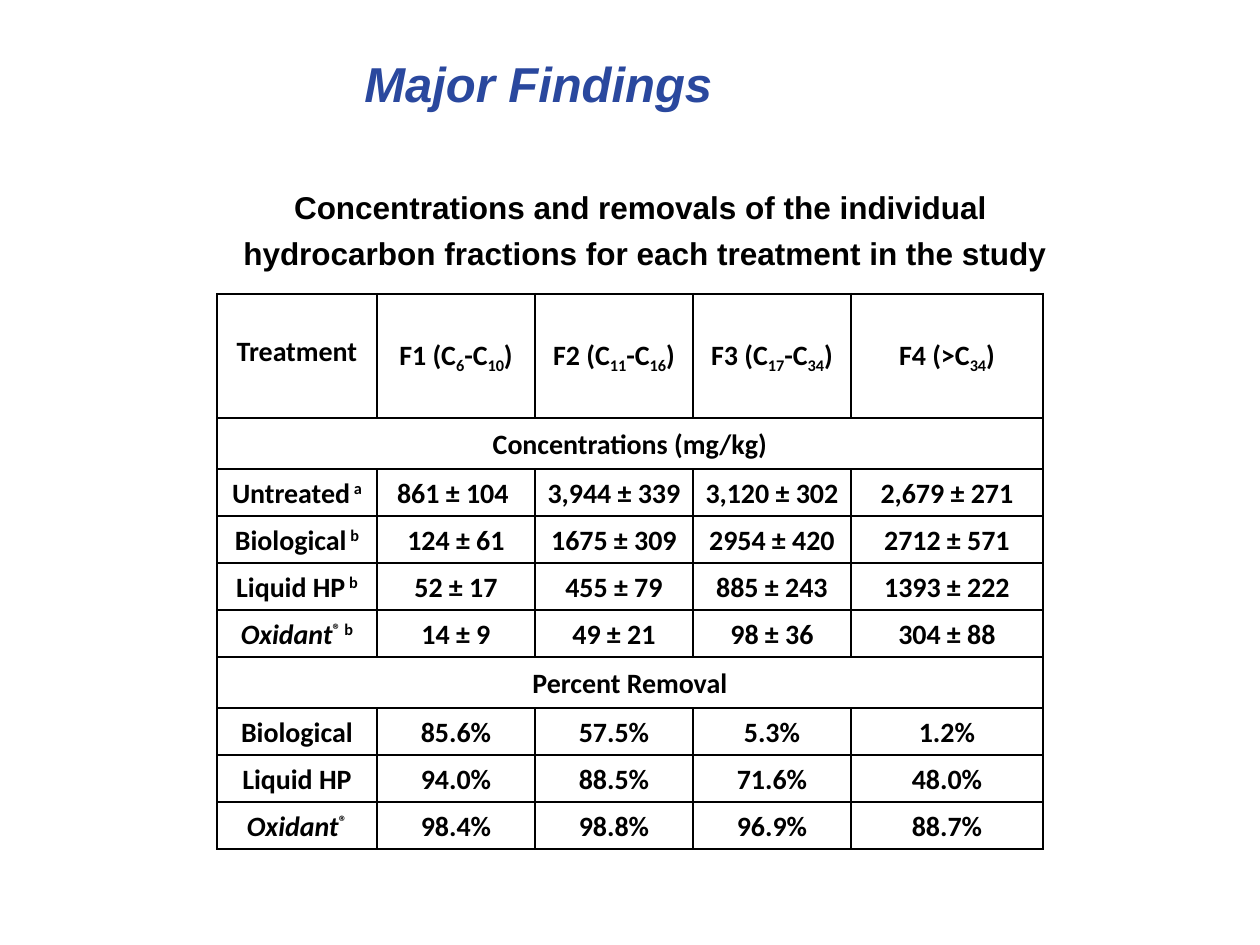
from pptx import Presentation
from pptx.dml.color import RGBColor
from pptx.enum.text import MSO_ANCHOR, PP_ALIGN
from pptx.oxml.ns import qn
from pptx.util import Pt
from lxml.etree import SubElement

EMU_PER_PX = 914400 / 126
COLORS = {"title": "2A489E", "ink": "000000"}
PRODUCT = "Oxidant"
COLUMN_WIDTHS = [160, 158, 158, 158, 192]
HEADER_HEIGHT, SECTION_HEIGHT, DATA_HEIGHT = 124, 51, 47

CAPTION = [
    "Concentrations and removals of the individual ",
    "hydrocarbon fractions for each treatment in the study",
]
FINDINGS = [
    ["Treatment", "F1 (C|6|-C|10|)", "F2 (C|11|-C|16|)", "F3 (C|17|-C|34|)", "F4 (>C|34|)"],
    ["Concentrations (mg/kg)"],
    ["Untreated| a", "861 ± 104 ", "3,944 ± 339", "3,120 ± 302", "2,679 ± 271"],
    ["Biological| b", "124 ± 61", "1675 ± 309", "2954 ± 420", "2712 ± 571"],
    ["Liquid HP| b", "52 ± 17", "455 ± 79", "885 ± 243", "1393 ± 222"],
    [PRODUCT + "|® b", "14 ± 9", "49 ± 21", "98 ± 36", "304 ± 88"],
    ["Percent Removal"],
    ["Biological", "85.6%", "57.5%", "5.3%", "1.2%"],
    ["Liquid HP", "94.0%", "88.5%", "71.6%", "48.0%"],
    [PRODUCT + "|®", "98.4%", "98.8%", "96.9%", "88.7%"],
]


def px(length):
    """Turn pixels into EMU."""
    return round(length * EMU_PER_PX)


def write(paragraph, text, font="Arial", size=18, color="ink", italic=False,
          baseline=0, align=PP_ALIGN.CENTER, line=1.0, before=0):
    """Write bold text in which every second part between bars is raised or lowered."""
    paragraph.alignment = align
    paragraph.line_spacing = line
    paragraph.space_before = Pt(before)
    for index, part in enumerate(text.split("|")):
        run = paragraph.add_run()
        run.text = part
        run.font.name = font
        run.font.size = Pt(size)
        run.font.bold = True
        run.font.italic = italic or part == PRODUCT
        run.font.color.rgb = RGBColor.from_string(COLORS[color])
        if index % 2:
            run.font._element.set("baseline", str(baseline * 1000))


class FindingsSlide:
    """Hold the table style and the current slide."""

    def __init__(self, slide):
        """Keep the slide and the style of its table."""
        self.slide = slide
        self.cell_format = {"font": "Calibri", "size": 16, "line": 1.07}
        self.side_margin = 10
        self.border_width = 1

    def text(self, lines, left, top, width, height, margin_top, **style):
        """Add a text box with one paragraph per line."""
        frame = self.slide.shapes.add_textbox(px(left), px(top), px(width), px(height)).text_frame
        frame.word_wrap = True
        frame.margin_top = px(margin_top)
        for index, line in enumerate(lines):
            paragraph = frame.add_paragraph() if index else frame.paragraphs[0]
            write(paragraph, line, before=4.5 if index else 0, **style)

    def border(self, cell, top_width):
        """Draw the four edges of a cell."""
        properties = cell._tc.get_or_add_tcPr()
        for edge in ("lnL", "lnR", "lnT", "lnB"):
            width = top_width if edge == "lnT" else self.border_width
            line = SubElement(properties, qn("a:" + edge), w=str(Pt(width)))
            fill = SubElement(line, qn("a:solidFill"))
            SubElement(fill, qn("a:srgbClr"), val=COLORS["ink"])

    def table(self, rows, left, top):
        """Add the table, with one-entry rows merged into section headings."""
        heights = [SECTION_HEIGHT if len(row) == 1 else DATA_HEIGHT for row in rows]
        heights[0] = HEADER_HEIGHT
        grid = self.slide.shapes.add_table(
            len(rows), len(COLUMN_WIDTHS), px(left), px(top),
            px(sum(COLUMN_WIDTHS)), px(sum(heights))).table
        grid.first_row = grid.horz_banding = False
        for column, width in zip(grid.columns, COLUMN_WIDTHS):
            column.width = px(width)
        for number, (values, height) in enumerate(zip(rows, heights)):
            grid.rows[number].height = px(height)
            cells = list(grid.rows[number].cells)
            for cell in cells:
                self.border(cell, self.border_width if number else 1.5)
                cell.fill.background()
                cell.vertical_anchor = MSO_ANCHOR.MIDDLE
                cell.margin_left = cell.margin_right = px(self.side_margin)
                cell.margin_top = cell.margin_bottom = 0
            if len(values) == 1:
                cells[0].merge(cells[-1])
            for cell, value in zip(cells, values):
                write(cell.text_frame.paragraphs[0], value,
                      baseline=30 if number else -25, **self.cell_format)
        grid.cell(0, 0).margin_bottom = px(10)


def main():
    """Build the slide and save it."""
    deck = Presentation()
    deck.slide_width, deck.slide_height = px(1260), px(945)
    findings = FindingsSlide(deck.slides.add_slide(deck.slide_layouts[6]))
    findings.text(CAPTION, 73, 179, 1144, 683, margin_top=9)
    findings.text(["Major Findings"], 352, 42, 867, 84, margin_top=11,
                  size=28, color="title", italic=True, align=PP_ALIGN.LEFT)
    findings.table(FINDINGS, 217, 294)
    deck.save("out.pptx")


if __name__ == "__main__":
    main()
